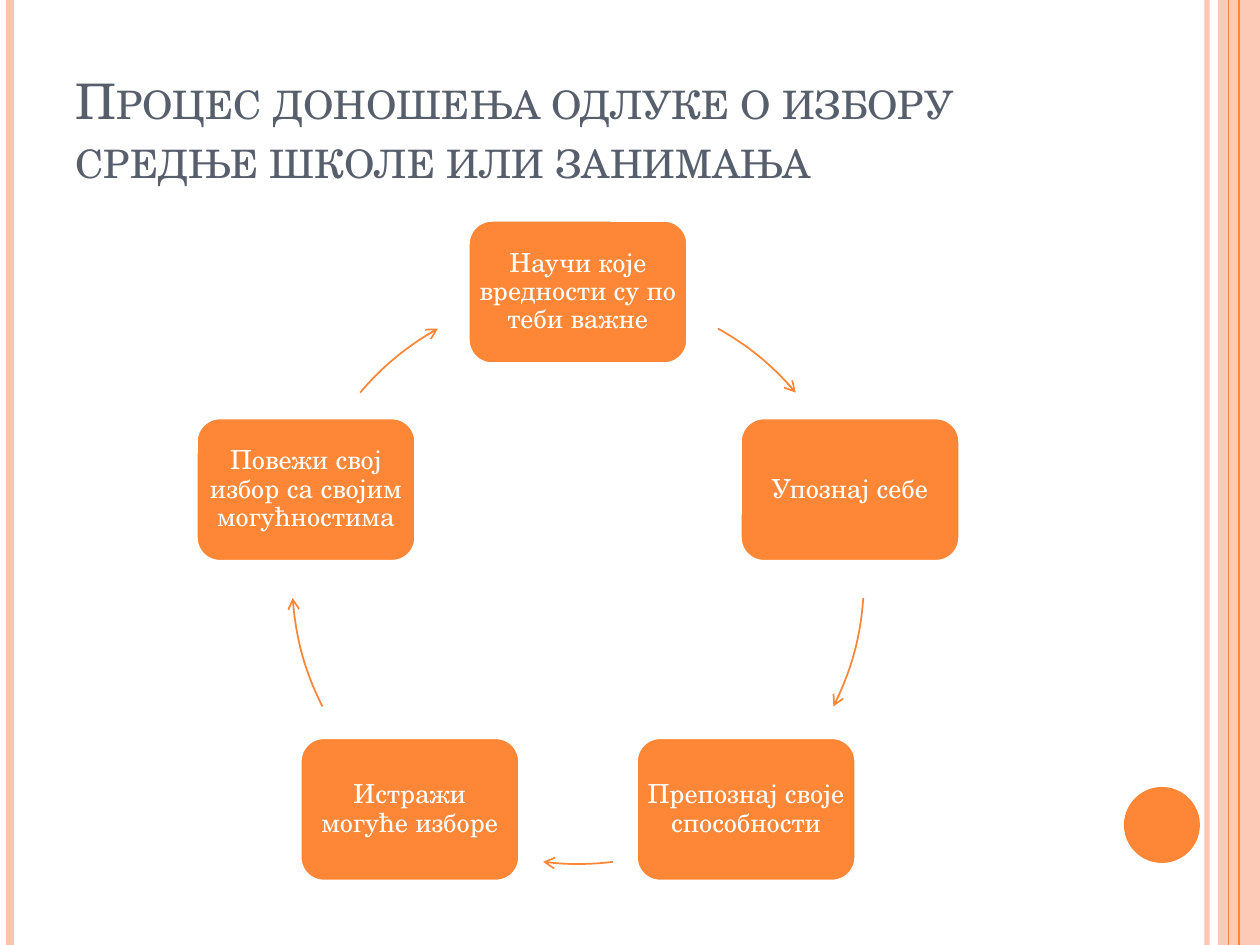
from lxml import etree
from pptx import Presentation
from pptx import util as u
from pptx.dml.color import RGBColor
from pptx.enum import shapes, text
from pptx.oxml.ns import qn
import math

SCALE = 914400 / 126  # EMU per pixel
FONT = "TeX Gyre Schola"
COLORS = {"orange": "FE8637", "peach": "FEC3AE", "slate": "575F6D", "white": "FFFFFF"}

RING_X, RING_Y, RING_R = 578, 578, 286
STEP_W, STEP_H = 220, 144
STEPS = [
    "Научи које вредности су по теби важне",
    "Упознај себе",
    "Препознај своје способности",
    "Истражи могуће изборе",
    "Повежи свој избор са својим могућностима",
]
# Start and end of each arrow, in degrees clockwise from the top of the ring
ARROWS = [(29.3, 49.6), (94, 116.7), (173, 187), (243.3, 266), (310.4, 330.7)]
# Vertical rules: x, width in points, colour, opacity in percent
RULES = [(1207, 3, "peach", 93), (10, 4.5, "peach", 100),
         (1239, 1.5, "orange", 100), (1228.5, 0.75, "orange", 100)]


def px(value):
    return u.Emu(round(value * SCALE))


def box(*values):
    return [px(value) for value in values]


def rgb(name):
    return RGBColor.from_string(COLORS[name])


def set_opacity(shape, percent):
    color = shape._element.spPr.find(".//" + qn("a:srgbClr"))
    etree.SubElement(color, qn("a:alpha"), val=str(percent * 1000))


def add_text(frame, words, size, color, align):
    paragraph = frame.paragraphs[0]
    paragraph.alignment = align
    run = paragraph.add_run()
    run.text = words
    run.font.name = FONT
    run.font.size = u.Pt(size)
    run.font.color.rgb = rgb(color)
    return paragraph, run


def add_rule(slide, x, width, color, opacity):
    rule = slide.shapes.add_connector(shapes.MSO_CONNECTOR.STRAIGHT, *box(x, 0, x, 945))
    rule.line.width = u.Pt(width)
    rule.line.color.rgb = rgb(color)
    etree.SubElement(rule._element.spPr, qn("a:effectLst"))
    if opacity < 100:
        set_opacity(rule, opacity)


def add_filled(slide, kind, bounds, color):
    filled = slide.shapes.add_shape(kind, *box(*bounds))
    filled.shadow.inherit = False
    filled.fill.solid()
    filled.fill.fore_color.rgb = rgb(color)
    filled.line.fill.background()
    return filled


def add_title(slide, words):
    title = slide.shapes.title
    title.left, title.top, title.width, title.height = box(63, 38, 1029, 157)
    frame = title.text_frame
    frame.word_wrap = True
    frame.auto_size = text.MSO_AUTO_SIZE.NONE
    frame.vertical_anchor = text.MSO_ANCHOR.BOTTOM
    _, run = add_text(frame, words, 28, "slate", text.PP_ALIGN.LEFT)
    run._r.get_or_add_rPr().set("cap", "small")


def add_step(slide, index, words):
    angle = math.radians(360 / len(STEPS) * index)
    left = RING_X + RING_R * math.sin(angle) - STEP_W / 2
    top = RING_Y - RING_R * math.cos(angle) - STEP_H / 2
    step = add_filled(slide, shapes.MSO_SHAPE.ROUNDED_RECTANGLE,
                      (left, top, STEP_W, STEP_H), "orange")
    step.line.color.rgb = rgb("white")
    step.line.width = u.Pt(2)
    frame = step.text_frame
    frame.word_wrap = True
    frame.vertical_anchor = text.MSO_ANCHOR.MIDDLE
    frame.margin_left = frame.margin_right = 0
    frame.margin_top = frame.margin_bottom = 0
    paragraph, _ = add_text(frame, words, 15, "white", text.PP_ALIGN.CENTER)
    paragraph.line_spacing = 0.9


def add_arrow(slide, start, end):
    arrow = slide.shapes.add_shape(
        shapes.MSO_SHAPE.ARC,
        *box(RING_X - RING_R, RING_Y - RING_R, 2 * RING_R, 2 * RING_R))
    arrow.shadow.inherit = False
    # Arc angles run clockwise from the right; 0.6 turns degrees into adjustment units
    for i, angle in enumerate((start, end)):
        arrow.adjustments[i] = (angle - 90) % 360 * 0.6
    arrow.fill.background()
    arrow.line.color.rgb = rgb("orange")
    arrow.line.width = u.Pt(1)
    etree.SubElement(arrow.line._get_or_add_ln(), qn("a:tailEnd"), type="arrow")


def main():
    deck = Presentation()
    deck.slide_width, deck.slide_height = box(1260, 945)
    slide = deck.slides.add_slide(deck.slide_layouts[5])

    # Side decoration
    for rule in RULES[:2]:
        add_rule(slide, *rule)
    band = add_filled(slide, shapes.MSO_SHAPE.RECTANGLE, (1218, 0, 42, 945), "peach")
    set_opacity(band, 87)
    for rule in RULES[2:]:
        add_rule(slide, *rule)
    add_filled(slide, shapes.MSO_SHAPE.OVAL, (1124, 787, 76, 76), "orange")

    add_title(slide, "Процес доношења одлуке о избору средње школе или занимања")

    # Decision cycle
    for index, (words, arrow) in enumerate(zip(STEPS, ARROWS)):
        add_step(slide, index, words)
        add_arrow(slide, *arrow)

    deck.save("out.pptx")


main()
